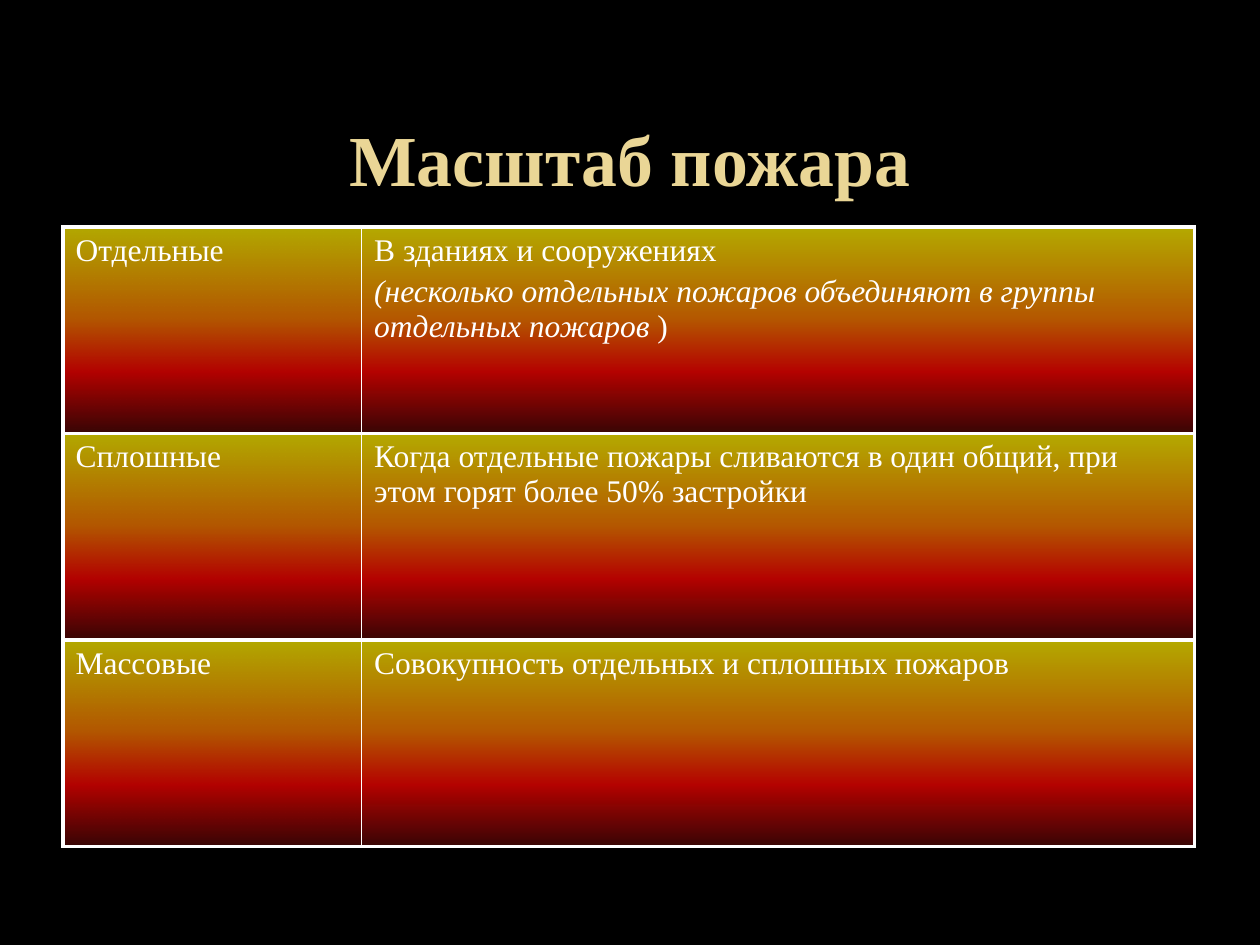
from lxml.etree import SubElement
from pptx import Presentation
from pptx.dml.color import RGBColor
from pptx.enum.text import MSO_ANCHOR, PP_ALIGN
from pptx.oxml.ns import qn
from pptx.util import Inches, Pt

# Content: rows of cells, cells of paragraphs, paragraphs of (text, italic) runs
TITLE = "Масштаб пожара"
ROWS = [
    ([[("Отдельные", False)]],
     [[("В зданиях и сооружениях", False)],
      [("(несколько отдельных пожаров объединяют в группы отдельных пожаров", True),
       (" )", False)]]),
    ([[("Сплошные", False)]],
     [[("Когда отдельные пожары сливаются в один общий, "
        "при этом горят более 50% застройки", False)]]),
    ([[("Массовые", False)]],
     [[("Совокупность отдельных и сплошных пожаров", False)]]),
]

THEME = {
    "background": "000000",
    "border": "FFFFFF",
    "fire": [(0, "FFF200"), (45, "FF7A00"), (70, "FF0300"), (100, "4D0808")],
    "fire_opacity": 70,
    "outer_line": 2.25,
    "inner_line": 1,
    "paragraph_gap": Pt(3.6),
    "title": {"name": "Times New Roman", "size": Pt(41), "bold": True, "color": "EAD696"},
    "body": {"name": "Times New Roman", "size": Pt(18), "color": "FFFFFF"},
}
TITLE_BOX = (0.5, 0.5, 9, 1.5)
TABLE_LEFT, TABLE_TOP = 0.5, 1.8
COLUMN_WIDTHS = (2.37, 6.61)
ROW_HEIGHT = 1.64


def format_font(font, style, **extra):
    for name, value in {**style, **extra}.items():
        if name == "color":
            font.color.rgb = RGBColor.from_string(value)
        else:
            setattr(font, name, value)


def add_border(properties, side, width):
    line = SubElement(properties, qn(f"a:ln{side}"), w=str(Pt(width)))
    fill = SubElement(line, qn("a:solidFill"))
    SubElement(fill, qn("a:srgbClr"), val=THEME["border"])


def add_fire_fill(properties):
    gradient = SubElement(properties, qn("a:gradFill"), rotWithShape="1")
    stops = SubElement(gradient, qn("a:gsLst"))
    for position, color in THEME["fire"]:
        stop = SubElement(stops, qn("a:gs"), pos=str(position * 1000))
        tint = SubElement(stop, qn("a:srgbClr"), val=color)
        SubElement(tint, qn("a:alpha"), val=str(THEME["fire_opacity"] * 1000))
    SubElement(gradient, qn("a:lin"), ang="5400000", scaled="0")


def fill_text(cell, paragraphs):
    frame = cell.text_frame
    for index, runs in enumerate(paragraphs):
        paragraph = frame.add_paragraph() if index else frame.paragraphs[0]
        if index:
            paragraph.space_before = THEME["paragraph_gap"]
        for text, italic in runs:
            run = paragraph.add_run()
            run.text = text
            format_font(run.font, THEME["body"], italic=italic)


def add_title(slide):
    title = slide.shapes.title
    title.left, title.top, title.width, title.height = map(Inches, TITLE_BOX)
    frame = title.text_frame
    frame.vertical_anchor = MSO_ANCHOR.MIDDLE
    paragraph = frame.paragraphs[0]
    paragraph.alignment = PP_ALIGN.CENTER
    run = paragraph.add_run()
    run.text = TITLE
    format_font(run.font, THEME["title"])


def add_fire_table(slide):
    table = slide.shapes.add_table(
        len(ROWS), len(COLUMN_WIDTHS), Inches(TABLE_LEFT), Inches(TABLE_TOP),
        Inches(sum(COLUMN_WIDTHS)), Inches(ROW_HEIGHT * len(ROWS))).table
    table.first_row = table.horz_banding = False
    for column, width in zip(table.columns, COLUMN_WIDTHS):
        column.width = Inches(width)
    last = len(COLUMN_WIDTHS) - 1
    for row, contents in zip(table.rows, ROWS):
        row.height = Inches(ROW_HEIGHT)
        for index, (cell, paragraphs) in enumerate(zip(row.cells, contents)):
            fill_text(cell, paragraphs)
            # Only the divider between columns is thin
            thin_sides = ("L" if index else "") + ("R" if index < last else "")
            properties = cell._tc.get_or_add_tcPr()
            for side in "LRTB":
                width = THEME["inner_line" if side in thin_sides else "outer_line"]
                add_border(properties, side, width)
            add_fire_fill(properties)


def main():
    presentation = Presentation()
    presentation.slide_width, presentation.slide_height = Inches(10), Inches(7.5)
    slide = presentation.slides.add_slide(presentation.slide_layouts[5])
    background = slide.background.fill
    background.solid()
    background.fore_color.rgb = RGBColor.from_string(THEME["background"])
    add_title(slide)
    add_fire_table(slide)
    presentation.save("out.pptx")


if __name__ == "__main__":
    main()
